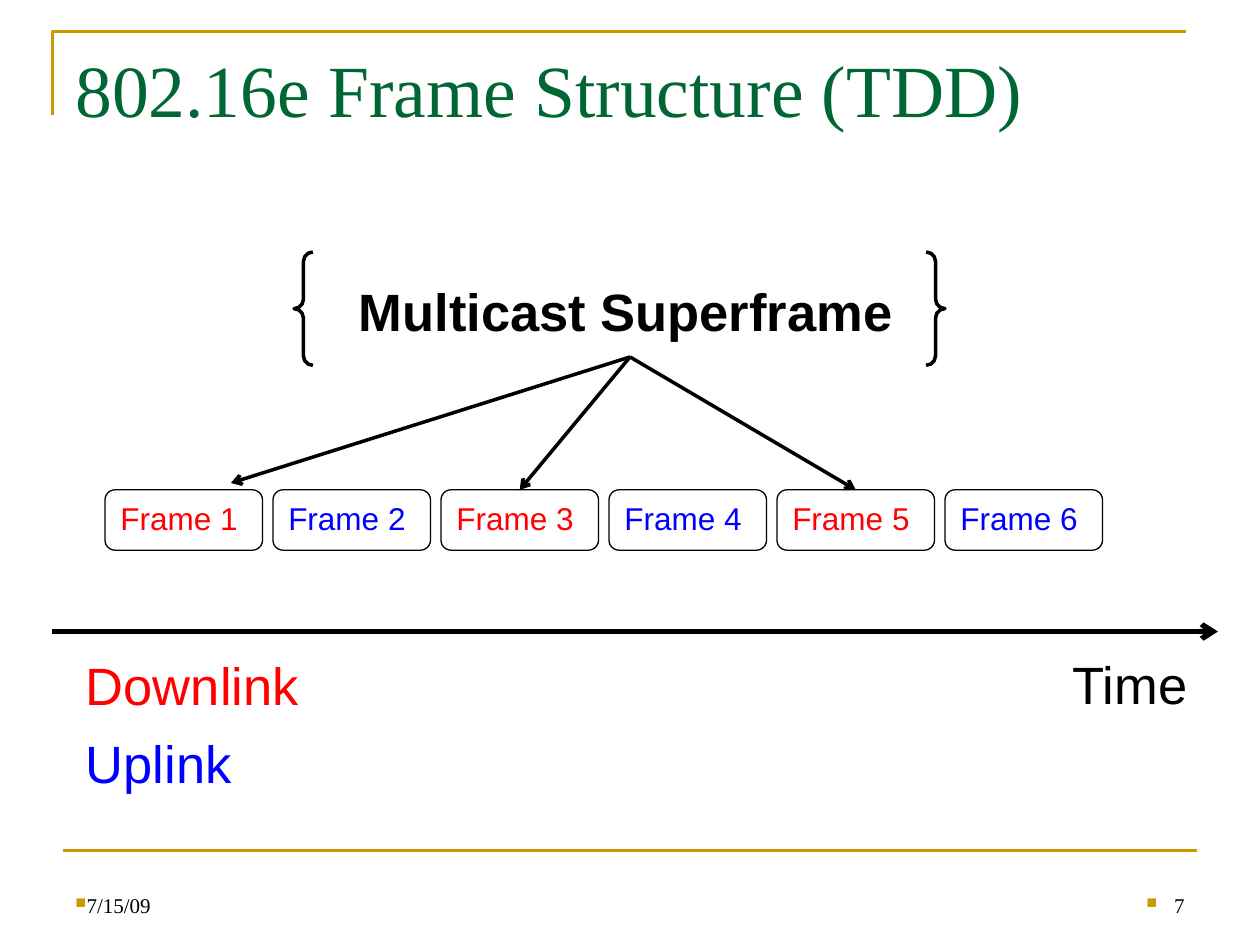
from lxml import etree
from pptx import Presentation
from pptx.dml.color import RGBColor
from pptx.enum.shapes import MSO_CONNECTOR, MSO_SHAPE
from pptx.enum.text import MSO_ANCHOR, PP_ALIGN
from pptx.oxml.ns import qn
from pptx.util import Inches, Pt

STRAIGHT = MSO_CONNECTOR.STRAIGHT
FRAME_SHAPE = MSO_SHAPE.FLOWCHART_ALTERNATE_PROCESS
BRACES = MSO_SHAPE.LEFT_BRACE, MSO_SHAPE.RIGHT_BRACE
BRACE_PAIR = MSO_SHAPE.DOUBLE_BRACE
TOP, BOTTOM = MSO_ANCHOR.TOP, MSO_ANCHOR.BOTTOM
LEFT, RIGHT = PP_ALIGN.LEFT, PP_ALIGN.RIGHT

COLORS = {
    "gold": "CC9900",
    "title": "006633",
    "ink": "000000",
    "paper": "FFFFFF",
    "downlink": "FF0000",
    "uplink": "0000FF",
}
COLORS = {role: RGBColor.from_string(value) for role, value in COLORS.items()}

deck = Presentation()
deck.slide_width, deck.slide_height = Inches(10), Inches(7.5)
COL, ROW = deck.slide_width / 24, deck.slide_height / 18
slide = deck.slides.add_slide(deck.slide_layouts[6])
shapes = slide.shapes


def write(holder, text, size, color, font="Arial", bold=False, wrap=True,
          anchor=TOP, align=LEFT, lead=0.13):
    frame = holder.text_frame
    frame.word_wrap = wrap
    frame.vertical_anchor = anchor
    paragraph = frame.paragraphs[0]
    paragraph.text = text
    paragraph.alignment = align
    paragraph.space_before = Pt(round(size * lead))
    paragraph.font.name = font
    paragraph.font.size = Pt(size)
    paragraph.font.bold = bold
    paragraph.font.color.rgb = COLORS[color]
    return paragraph


def rule(start, end, color, weight, arrow=False):
    (x1, y1), (x2, y2) = start, end
    line = shapes.add_connector(STRAIGHT, int(x1 * COL), int(y1 * ROW),
                                int(x2 * COL), int(y2 * ROW))
    line.line.color.rgb = COLORS[color]
    line.line.width = Pt(weight)
    if arrow:
        etree.SubElement(line.line._get_or_add_ln(), qn("a:tailEnd"), type="arrow")
    etree.SubElement(line._element.spPr, qn("a:effectLst"))
    return line


corner_path = shapes.build_freeform(int(COL), int(2.2 * ROW))
corner_path.add_line_segments(
    [(int(COL), int(0.6 * ROW)), (int(22.6 * COL), int(0.6 * ROW))], close=False)
corner = corner_path.convert_to_shape()
corner.shadow.inherit = False
corner.fill.background()
corner.line.color.rgb = COLORS["gold"]
corner.line.width = Pt(1.5)
rule((1.2, 16.2), (22.8, 16.2), "gold", 1.5)

title = shapes.add_textbox(int(1.2 * COL), int(0.72 * ROW), int(21.6 * COL), int(3 * ROW))
write(title, "802.16e Frame Structure (TDD)", 42, "title", "Times New Roman", lead=0)

for left, text, align, hang in [(1.2, "7/15/09", LEFT, 0), (17.2, "7", RIGHT, 0.22)]:
    footer = shapes.add_textbox(int(left * COL), int(16.4 * ROW), int(5.6 * COL), int(1.2 * ROW))
    paragraph = write(footer, text, 12, "ink", "Times New Roman",
                      anchor=BOTTOM, align=align, lead=0)
    properties = paragraph._p.get_or_add_pPr()
    properties.set("marL", str(Inches(hang)))
    properties.set("indent", str(-Inches(hang)))
    bullet_color = etree.SubElement(properties, qn("a:buClr"))
    etree.SubElement(bullet_color, qn("a:srgbClr"), val=str(COLORS["gold"]))
    etree.SubElement(properties, qn("a:buSzPct"), val="70000")
    etree.SubElement(properties, qn("a:buFont"), typeface="Wingdings")
    etree.SubElement(properties, qn("a:buChar"), char="n")
    properties.append(properties.find(qn("a:defRPr")))

frames = []
for index in range(6):
    frame_box = shapes.add_shape(FRAME_SHAPE, int((2 + 3.2 * index) * COL), int(9.33 * ROW),
                                 int(3 * COL), int(1.15 * ROW))
    frame_box.shadow.inherit = False
    frame_box.fill.solid()
    frame_box.fill.fore_color.rgb = COLORS["paper"]
    frame_box.line.color.rgb = COLORS["ink"]
    frame_box.line.width = Pt(0.75)
    write(frame_box, f"Frame {index + 1}", 18, "uplink" if index % 2 else "downlink")
    frames.append(frame_box)

rule((1, 12.03), (23.2, 12.03), "ink", 3, arrow=True)

for left, top, width, text, color, bold in [
    (20.2, 12.3, 2.7, "Time", "ink", False),
    (1.4, 13.8, 3.3, "Uplink", "uplink", False),
    (1.4, 12.33, 4.6, "Downlink", "downlink", False),
    (6.6, 5.2, 10.75, "Multicast Superframe", "ink", True),
]:
    label = shapes.add_textbox(int(left * COL), int(top * ROW), int(width * COL), int(1.46 * ROW))
    write(label, text, 30, color, bold=bold, wrap=False)

fan_origin = (12, 6.8)
rule(fan_origin, (4.4, 9.2), "ink", 2, arrow=True)
for target in (frames[2], frames[4]):
    arrow = rule(fan_origin, (target.left / COL + 1.5, 9.33), "ink", 2, arrow=True)
    arrow.end_connect(target, 0)

superframe_braces = shapes.add_shape(BRACE_PAIR, int(5.6 * COL), int(4.8 * ROW),
                                     int(12.4 * COL), int(2.16 * ROW))
superframe_braces.shadow.inherit = False
superframe_braces.fill.background()
superframe_braces.line.color.rgb = COLORS["ink"]
superframe_braces.line.width = Pt(2)

deck.save("out.pptx")
